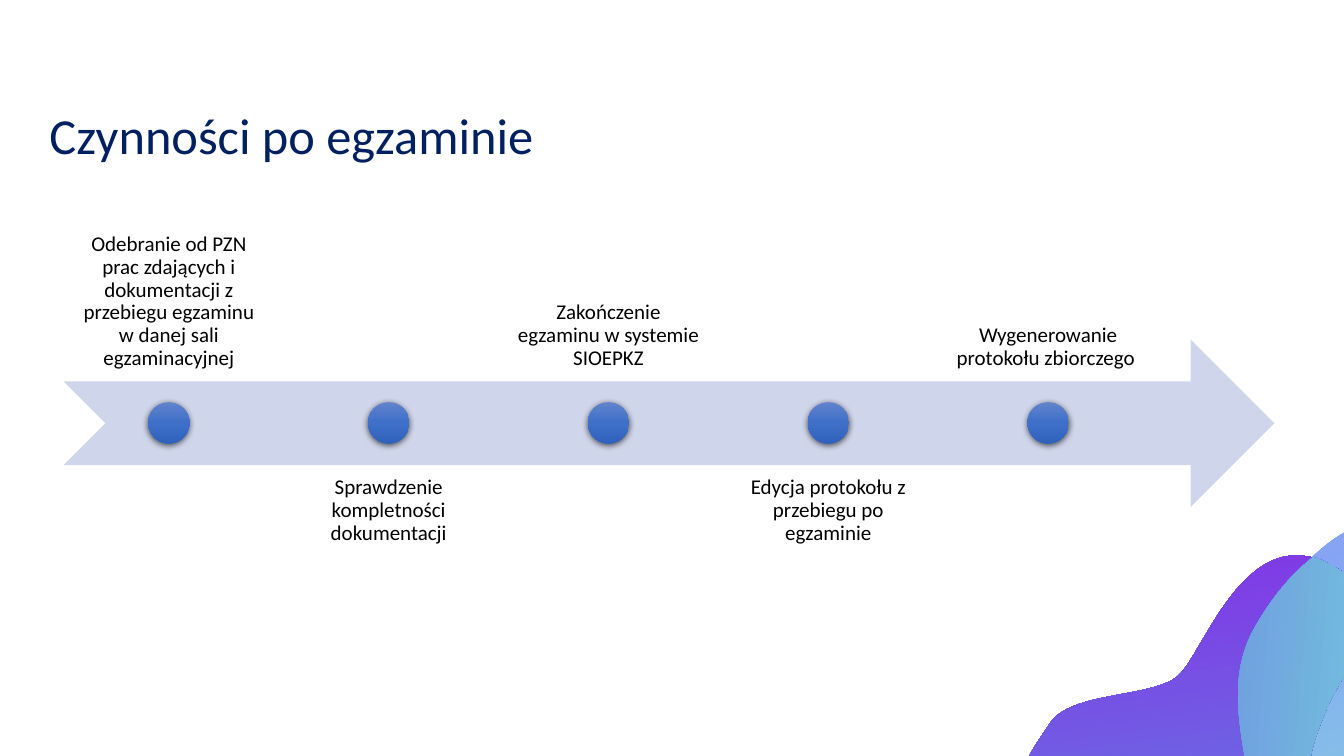
from math import cos, radians, sin

from lxml import etree
from pptx import Presentation
from pptx.dml.color import RGBColor
from pptx.enum.shapes import MSO_SHAPE
from pptx.enum.text import MSO_ANCHOR, MSO_AUTO_SIZE, PP_ALIGN
from pptx.oxml.ns import qn
from pptx.util import Inches, Pt

ARROW, DOT = MSO_SHAPE.NOTCHED_RIGHT_ARROW, MSO_SHAPE.OVAL
TOP, MIDDLE, BOTTOM = MSO_ANCHOR.TOP, MSO_ANCHOR.MIDDLE, MSO_ANCHOR.BOTTOM
LEFT, CENTER = PP_ALIGN.LEFT, PP_ALIGN.CENTER
FONT = "Calibri"
COLORS = {
    "title": "002060", "text": "000000", "arrow": "CFD5EA", "shadow": "000000",
    "dot light": "6183CB", "dot mid": "3E70CA", "dot dark": "3062BB",
    "aqua": "80DEDE", "sky": "85C1E7", "periwinkle": "878CFF",
    "mint": "7CEFD8", "blue": "6672E4", "violet": "882BE5",
}


def paint_gradient(shape, stops, clockwise_angle):
    """Fill a shape without outline; stops are (percent, colour name)."""
    shape.fill.gradient()
    shape.fill.gradient_angle = (360 - clockwise_angle) % 360
    stop_list = shape._element.spPr.find(".//" + qn("a:gsLst"))
    for old_stop in list(stop_list):
        stop_list.remove(old_stop)
    for percent, color in stops:
        stop = etree.SubElement(stop_list, qn("a:gs"), pos=str(percent * 1000))
        etree.SubElement(stop, qn("a:srgbClr"), val=COLORS[color])
    shape.line.fill.background()
    shape.shadow.inherit = False


def write_text(frame, text, size, color, align, anchor, inset):
    frame.word_wrap = True
    frame.auto_size = MSO_AUTO_SIZE.NONE
    frame.vertical_anchor = anchor
    frame.margin_left = frame.margin_right = Inches(inset)
    frame.margin_top = frame.margin_bottom = Inches(inset)
    paragraph = frame.paragraphs[0]
    paragraph.alignment = align
    paragraph.line_spacing = 0.9
    paragraph.space_before = Pt(0)
    run = paragraph.add_run()
    run.text = text
    run.font.name, run.font.size = FONT, Pt(size)
    run.font.color.rgb = RGBColor.from_string(COLORS[color])


prs = Presentation()
prs.slide_width, prs.slide_height = Inches(13.33), Inches(7.5)
slide = prs.slides.add_slide(prs.slide_layouts[5])
shapes = slide.shapes

# Title
title = shapes.title
title.left, title.top = Inches(0.49), Inches(0.91)
title.width, title.height = Inches(11.5), Inches(0.93)
write_text(title.text_frame, "Czynności po egzaminie", 36, "title", LEFT, MIDDLE, 0)

# Corner waves: start point, Bézier curves (two controls and an end), gradient
waves = [
    ((11.34, 9.4), [
        (13.57, 8.54, 11.91, 7.23, 12.59, 6.08), (13.28, 4.93, 14.05, 5.07, 14.27, 5.3),
        (14.49, 5.53, 14.54, 5.77, 14.21, 6.16), (13.87, 6.54, 14.55, 7.28, 15.02, 7.79),
        (15.48, 8.29, 15.65, 9.43, 14.54, 9.66), (13.43, 9.88, 13.49, 9.86, 12.94, 10.76),
        (12.41, 11.65, 11.76, 11.62, 11.76, 11.62), (11.76, 11.62, 10.69, 11.5, 10.55, 10.62),
        (10.4, 9.73, 11.34, 9.4, 11.34, 9.4),
    ], [(0, "aqua"), (54, "sky"), (100, "periwinkle")], 250),
    ((10.1, 10.76), [
        (10.1, 10.76, 10.48, 11.63, 12.11, 11.07), (13.74, 10.51, 13.29, 8.9, 13.12, 8.33),
        (12.94, 7.76, 12.92, 7.61, 13.15, 7.05), (13.38, 6.5, 13.99, 6, 13.17, 5.59),
        (12.35, 5.18, 11.94, 6.47, 11.69, 6.7), (11.44, 6.93, 10.62, 6.85, 10.41, 7.18),
        (10.19, 7.52, 9.89, 7.79, 10.31, 8.97), (10.31, 8.97, 10.67, 9.51, 10.16, 10.14),
        (10.16, 10.14, 9.88, 10.51, 10.1, 10.76),
    ], [(0, "mint"), (51, "blue"), (100, "violet")], 262),
    ((12.11, 11.07), [
        (11.37, 11.32, 10.89, 11.28, 10.58, 11.17), (10.5, 11.05, 10.44, 10.91, 10.41, 10.74),
        (10.27, 9.85, 11.21, 9.53, 11.21, 9.53), (13.44, 8.66, 11.77, 7.35, 12.46, 6.2),
        (12.64, 5.89, 12.83, 5.68, 13.02, 5.53), (13.07, 5.54, 13.12, 5.56, 13.17, 5.59),
        (13.99, 6, 13.38, 6.5, 13.15, 7.05), (12.92, 7.6, 12.94, 7.76, 13.12, 8.33),
        (13.29, 8.9, 13.74, 10.51, 12.11, 11.07),
    ], [(0, "violet"), (19, "blue"), (100, "mint")], 5),
]
TILT = 52.2
tilt_cos, tilt_sin = cos(radians(TILT)), sin(radians(TILT))
for start, curves, stops, angle in waves:
    # Turn the points back by the tilt, then let the shape's rotation restore them
    flat = [start] + [curve[k:k + 2] for curve in curves for k in (0, 2, 4)]
    points = [(Inches(x * tilt_cos + y * tilt_sin), Inches(y * tilt_cos - x * tilt_sin))
              for x, y in flat]
    outline = shapes.build_freeform(*points[0])
    outline.add_line_segments(points[3::3], close=True)
    wave = outline.convert_to_shape()

    # Bend each straight segment into its curve
    segments = list(wave._element.iter(qn("a:lnTo")))
    for i, segment in enumerate(segments):
        bend = etree.Element(qn("a:cubicBezTo"))
        for x, y in points[3 * i + 1:3 * i + 4]:
            etree.SubElement(bend, qn("a:pt"), x=str(x - wave.left), y=str(y - wave.top))
        segment.getparent().replace(segment, bend)

    center_x, center_y = wave.left + wave.width / 2, wave.top + wave.height / 2
    wave.left = int(center_x * tilt_cos - center_y * tilt_sin - wave.width / 2)
    wave.top = int(center_x * tilt_sin + center_y * tilt_cos - wave.height / 2)
    wave.rotation = TILT
    paint_gradient(wave, stops, (angle - TILT) % 360)

# Timeline arrow
ARROW_LEFT, ARROW_TOP, ARROW_WIDTH, ROW = 0.63, 3.37, 12.01, 1.66
arrow = shapes.add_shape(ARROW, Inches(ARROW_LEFT), Inches(ARROW_TOP),
                         Inches(ARROW_WIDTH), Inches(ROW))
arrow.fill.solid()
arrow.fill.fore_color.rgb = RGBColor.from_string(COLORS["arrow"])
arrow.line.fill.background()
arrow.shadow.inherit = False

# Steps: captions alternate above and below the arrow's shaft
steps = [
    "Odebranie od PZN prac zdających i dokumentacji z przebiegu egzaminu w danej sali egzaminacyjnej",
    "Sprawdzenie kompletności dokumentacji",
    "Zakończenie egzaminu w systemie SIOEPKZ",
    "Edycja protokołu z przebiegu po egzaminie",
    "Wygenerowanie protokołu zbiorczego ",
]
STEPS_LEFT, STEP_WIDTH, STEP_PITCH = 0.635, 2.08, 2.18
ABOVE_TOP, BELOW_TOP, DOT_TOP, DOT_SIZE = 2.13, 4.61, 3.99, 0.41
for i, step_text in enumerate(steps):
    left = STEPS_LEFT + i * STEP_PITCH
    above = i % 2 == 0
    caption = shapes.add_textbox(Inches(left), Inches(ABOVE_TOP if above else BELOW_TOP),
                                 Inches(STEP_WIDTH), Inches(ROW))
    write_text(caption.text_frame, step_text, 15, "text", CENTER,
               BOTTOM if above else TOP, 0.12)

    dot = shapes.add_shape(DOT, Inches(left + (STEP_WIDTH - DOT_SIZE) / 2),
                           Inches(DOT_TOP), Inches(DOT_SIZE), Inches(DOT_SIZE))
    paint_gradient(dot, [(0, "dot light"), (50, "dot mid"), (100, "dot dark")], 90)
    effects = dot._element.spPr.find(qn("a:effectLst"))
    shadow = etree.SubElement(effects, qn("a:outerShdw"), blurRad=str(Pt(4.5)),
                              dist=str(Pt(1.5)), dir="5400000", algn="ctr", rotWithShape="0")
    shadow_color = etree.SubElement(shadow, qn("a:srgbClr"), val=COLORS["shadow"])
    etree.SubElement(shadow_color, qn("a:alpha"), val="63000")

prs.save("out.pptx")
